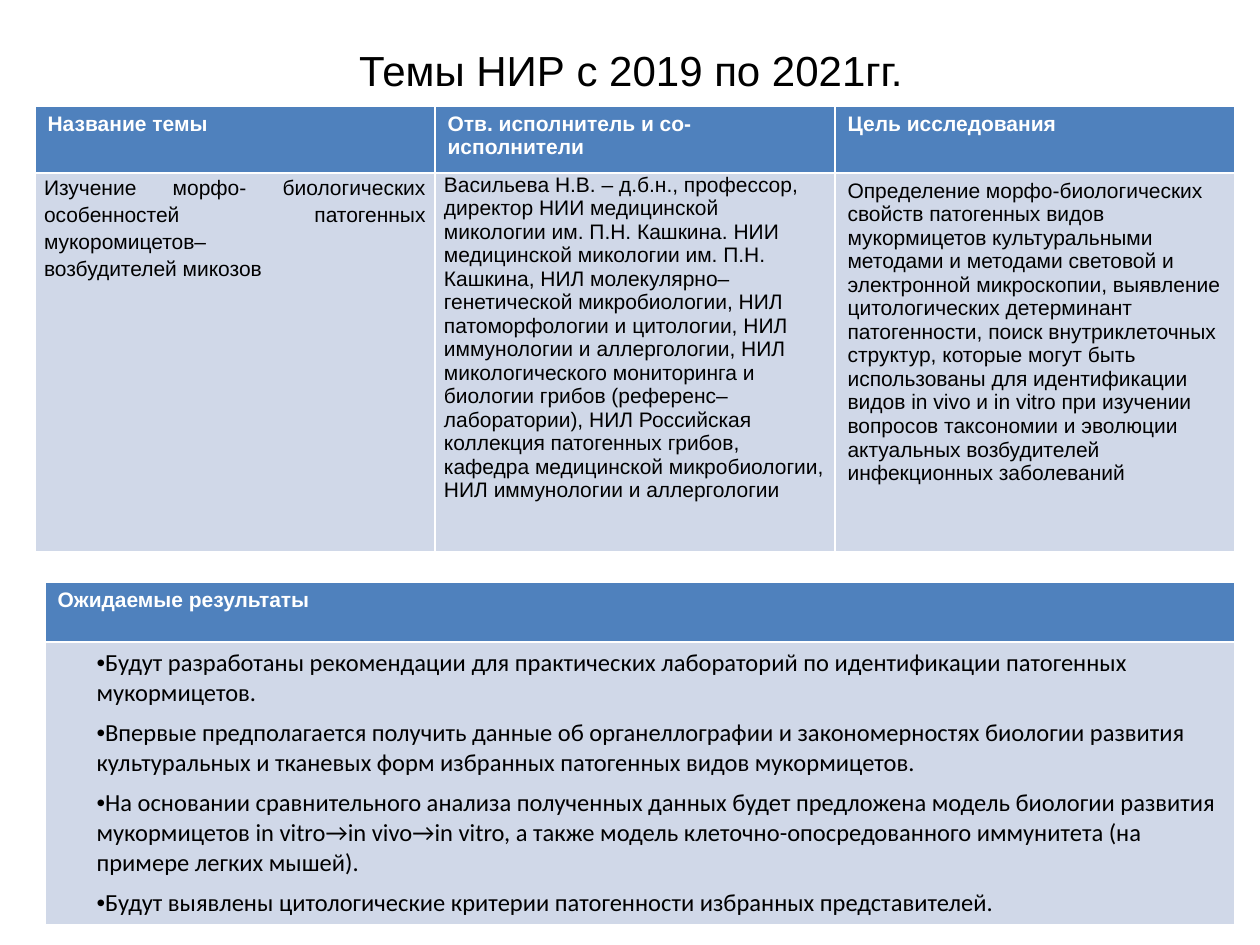
from lxml import etree
from pptx import Presentation
from pptx.dml.color import RGBColor
from pptx.enum.text import MSO_ANCHOR, PP_ALIGN
from pptx.oxml.ns import qn
from pptx.util import Pt

PX = 914400 / 126
CENTER, JUSTIFY, LEFT = PP_ALIGN.CENTER, PP_ALIGN.JUSTIFY, PP_ALIGN.LEFT
MIDDLE = MSO_ANCHOR.MIDDLE
BLUE, PALE, WHITE, BLACK = "4F81BD", "D0D8E8", "FFFFFF", "000000"


def px(*lengths):
    return [round(length * PX) for length in lengths]


def write(frame, texts, size=12, font="Arial", color=BLACK, bold=False,
          align=LEFT, line_spacing=None, before=None, bullet_indent=None):
    for number, text in enumerate(texts):
        paragraph = frame.paragraphs[0] if number == 0 else frame.add_paragraph()
        paragraph.alignment = align
        if line_spacing:
            paragraph.line_spacing = line_spacing
        if before:
            paragraph.space_before = Pt(before)
        if bullet_indent:
            properties = paragraph._p.get_or_add_pPr()
            properties.set("marL", str(px(bullet_indent)[0]))
            properties.set("indent", "0")
            etree.SubElement(properties, qn("a:buFont")).set("typeface", "Arial")
            etree.SubElement(properties, qn("a:buChar")).set("char", "•")
        run = paragraph.add_run()
        run.text = text
        run.font.size = Pt(size)
        run.font.name = font
        run.font.bold = bold
        run.font.color.rgb = RGBColor.from_string(color)


presentation = Presentation()
presentation.slide_width, presentation.slide_height = px(1260, 945)
slide = presentation.slides.add_slide(presentation.slide_layouts[5])

# Title
title = slide.shapes.title
title.left, title.top, title.width, title.height = px(64, 16, 1134, 107)
title.text_frame.vertical_anchor = MIDDLE
write(title.text_frame, ["Темы НИР с 2019 по 2021гг."], size=24, align=CENTER)

# Each column: heading, body paragraphs, body format, tight body margins
topic_columns = [
    ("Название темы",
     ["Изучение морфо- биологических особенностей патогенных мукоромицетов–",
      "возбудителей микозов"],
     {"align": JUSTIFY, "line_spacing": 1.15}, True),
    ("Отв. исполнитель и со- исполнители",
     ["Васильева Н.В. – д.б.н., профессор, директор НИИ медицинской "
      "микологии им. П.Н. Кашкина. НИИ медицинской микологии им. "
      "П.Н. Кашкина, НИЛ молекулярно– генетической микробиологии, НИЛ "
      "патоморфологии и цитологии, НИЛ иммунологии и аллергологии, НИЛ "
      "микологического мониторинга и биологии грибов (референс– "
      "лаборатории), НИЛ Российская коллекция патогенных грибов, "
      "кафедра медицинской микробиологии, НИЛ иммунологии и аллергологии"],
     {}, True),
    ("Цель исследования",
     ["Определение морфо-биологических свойств патогенных видов "
      "мукормицетов культуральными методами и методами световой и "
      "электронной микроскопии, выявление цитологических детерминант "
      "патогенности, поиск внутриклеточных структур, которые могут быть "
      "использованы для идентификации видов in vivo и in vitro при изучении "
      "вопросов таксономии и эволюции актуальных возбудителей "
      "инфекционных заболеваний"],
     {}, False),
]
result_columns = [
    ("Ожидаемые результаты",
     ["Будут разработаны рекомендации для практических лабораторий по "
      "идентификации патогенных мукормицетов.",
      "Впервые предполагается получить данные об органеллографии и "
      "закономерностях биологии развития культуральных и тканевых форм "
      "избранных патогенных видов мукормицетов.",
      "На основании сравнительного анализа полученных данных будет "
      "предложена модель биологии развития мукормицетов in vitro→in vivo→in "
      "vitro, а также модель клеточно-опосредованного иммунитета (на "
      "примере легких мышей).",
      "Будут выявлены цитологические критерии патогенности избранных "
      "представителей."],
     {"size": 14, "font": "Calibri", "before": 6, "bullet_indent": 39}, False),
]

# Tables: left, top, column width, row heights, columns
tables = [
    (35, 106, 400, (67, 379), topic_columns),
    (45, 582, 1190, (60, 282), result_columns),
]
for left, top, column_width, row_heights, columns in tables:
    frame = slide.shapes.add_table(
        2, len(columns),
        *px(left, top, column_width * len(columns), sum(row_heights)))
    table = frame.table
    for row, height in zip(table.rows, row_heights):
        row.height = px(height)[0]
    for index, (heading, body, body_format, tight) in enumerate(columns):
        table.columns[index].width = px(column_width)[0]
        header_cell, body_cell = table.cell(0, index), table.cell(1, index)
        for cell, fill in ((header_cell, BLUE), (body_cell, PALE)):
            cell.fill.solid()
            cell.fill.fore_color.rgb = RGBColor.from_string(fill)
        if tight:
            body_cell.margin_left, body_cell.margin_right = px(9, 9)
            body_cell.margin_top = body_cell.margin_bottom = 0
        write(header_cell.text_frame, [heading], color=WHITE, bold=True)
        write(body_cell.text_frame, body, **body_format)

presentation.save("out.pptx")
